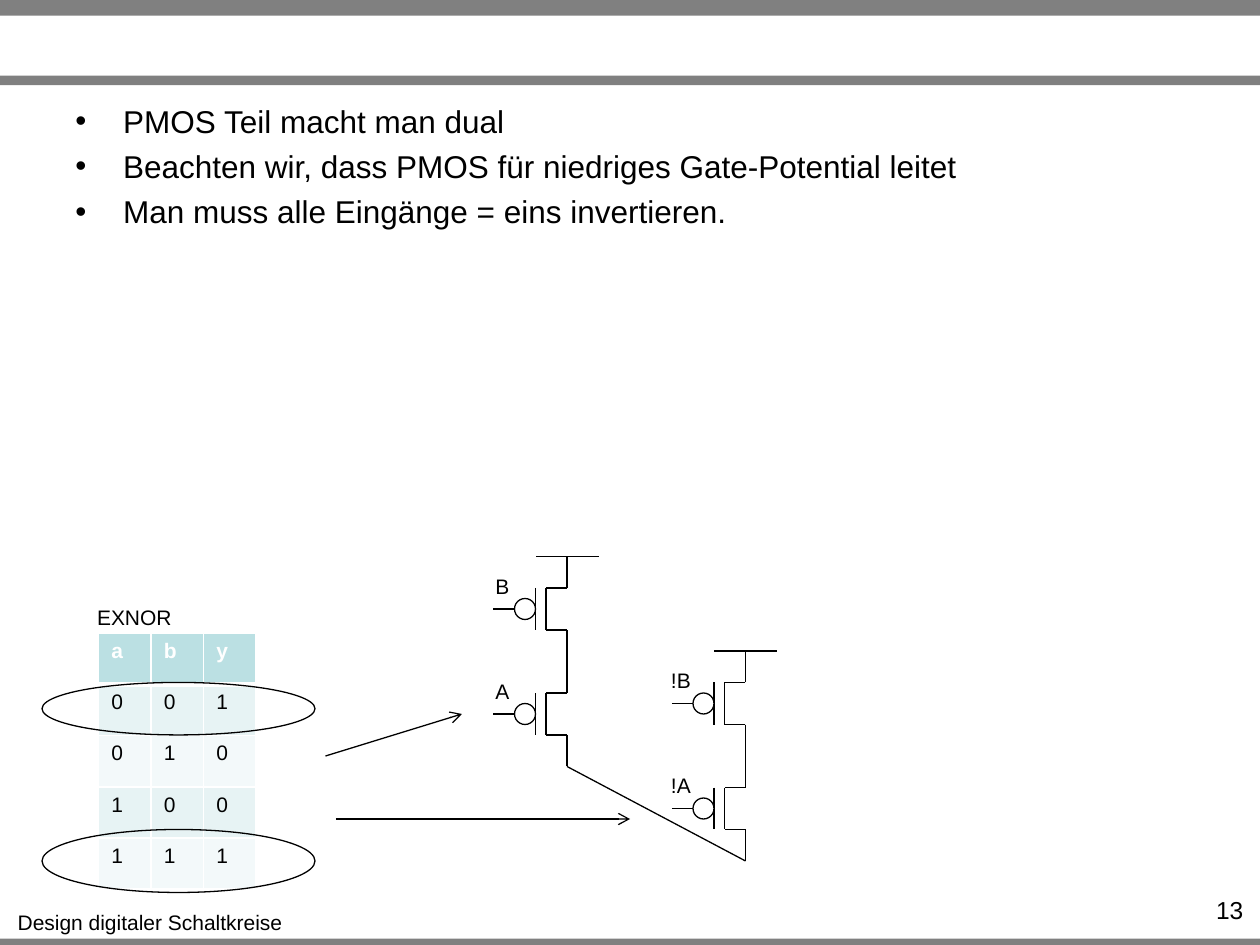
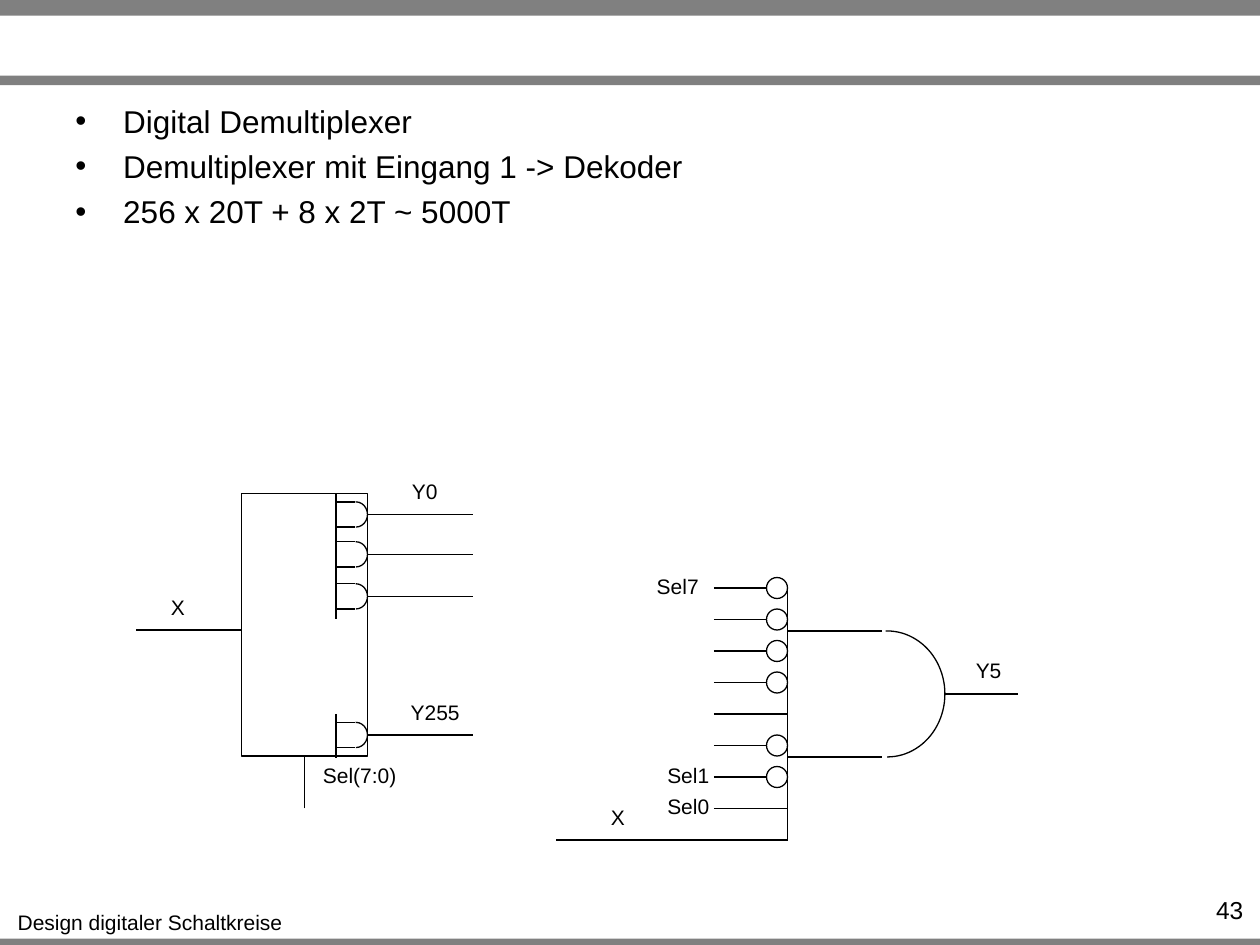
from dataclasses import dataclass

from lxml import etree
from pptx import Presentation
from pptx.dml.color import RGBColor
from pptx.enum.shapes import MSO_CONNECTOR, MSO_SHAPE
from pptx.enum.text import MSO_AUTO_SIZE, PP_ALIGN
from pptx.oxml.ns import qn
from pptx.util import Inches, Pt

RECT, ELLIPSE, ARC = MSO_SHAPE.RECTANGLE, MSO_SHAPE.OVAL, MSO_SHAPE.ARC
STRAIGHT = MSO_CONNECTOR.STRAIGHT
LEFT, CENTER, RIGHT = PP_ALIGN.LEFT, PP_ALIGN.CENTER, PP_ALIGN.RIGHT
FIT_SHAPE = MSO_AUTO_SIZE.SHAPE_TO_FIT_TEXT
BOTTOM_SIDE = 2
COLS, ROWS = 120, 90


@dataclass(frozen=True)
class Theme:
    """Colours, type sizes and line widths of the deck."""
    font: str = "Arial"
    ink: str = "000000"
    paper: str = "FFFFFF"
    band: str = "808080"
    head: str = "BBE0E3"
    stripes: tuple = ("E7F3F4", "F3F9FA")
    body: float = 18
    number: float = 14
    small: float = 12
    bullet_gap: float = 4.3
    line: float = 0.75
    border: float = 1
    head_border: float = 3


class Deck:
    """Draws styled elements on the current slide, placed by grid column and row."""

    def __init__(self, theme):
        self.theme = theme
        self.prs = Presentation()
        self.prs.slide_width, self.prs.slide_height = Inches(10), Inches(7.5)
        self.s = self.target = None

    def x(self, cols):
        """Turn columns into a length."""
        return round(self.prs.slide_width * cols / COLS)

    def y(self, rows):
        """Turn rows into a length."""
        return round(self.prs.slide_height * rows / ROWS)

    def box(self, x, y, w, h):
        """Turn a grid box into lengths."""
        return self.x(x), self.y(y), self.x(w), self.y(h)

    def slide(self, number, bullets):
        """Start a slide with bands, footer, page number and bullets."""
        self.s = self.prs.slides.add_slide(self.prs.slide_layouts[6])
        self.target = self.s.shapes
        for y, h in ((89.4, 0.6), (0, 1.5), (7.2, 0.9)):
            self.shape(RECT, 0, y, COLS, h, fill=self.theme.band, line=None)
        self.label("Design digitaler Schaltkreise", 0.4, 86, 27.8)
        self.bullets(bullets)
        tf = self.text_box(109.2, 84.7, 10.4, 2.9)
        tf.word_wrap = True
        self.run(tf.paragraphs[0], str(number), self.theme.number, align=RIGHT)

    def group(self):
        """Collect the following elements in a new group."""
        self.target = self.s.shapes.add_group_shape().shapes

    def ungroup(self):
        """Return to drawing directly on the slide."""
        self.target = self.s.shapes

    def run(self, p, text, size, color=None, bold=False, align=LEFT):
        """Add one styled run to a paragraph."""
        p.alignment = align
        r = p.add_run()
        r.text = text
        r.font.name, r.font.size, r.font.bold = self.theme.font, Pt(size), bold
        r.font.color.rgb = RGBColor.from_string(color or self.theme.ink)

    def text_box(self, x, y, w, h):
        """Add an empty text box and return its text frame."""
        return self.target.add_textbox(*self.box(x, y, w, h)).text_frame

    def label(self, text, x, y, w):
        """Add a centred one-line label."""
        tf = self.text_box(x, y, w, 3.6)
        tf.word_wrap, tf.auto_size = False, FIT_SHAPE
        self.run(tf.paragraphs[0], text, self.theme.small, align=CENTER)

    def bullets(self, items):
        """Add the bulleted body text."""
        tf = self.text_box(6, 9.1, 108, 19)
        tf.word_wrap = True
        for i, item in enumerate(items):
            p = tf.paragraphs[0] if i == 0 else tf.add_paragraph()
            pPr = p._p.get_or_add_pPr()
            pPr.set("marL", str(Inches(0.38)))
            pPr.set("indent", str(Inches(-0.38)))
            etree.SubElement(pPr, qn("a:buFont"), typeface=self.theme.font)
            etree.SubElement(pPr, qn("a:buChar"), char="•")
            if i:
                p.space_before = Pt(self.theme.bullet_gap)
            self.run(p, item, self.theme.body)

    def shape(self, kind, x, y, w, h, fill=None, line="ink"):
        """Add a preset shape, hollow unless a fill is given."""
        sp = self.target.add_shape(kind, *self.box(x, y, w, h))
        sp.shadow.inherit = False
        if fill:
            sp.fill.solid()
            sp.fill.fore_color.rgb = RGBColor.from_string(fill)
        else:
            sp.fill.background()
        if line:
            self.stroke(sp.line)
        else:
            sp.line.fill.background()
        return sp

    def stroke(self, line):
        """Apply the standard line style."""
        line.color.rgb = RGBColor.from_string(self.theme.ink)
        line.width = Pt(self.theme.line)

    def wire(self, x1, y1, x2, y2, arrow=False):
        """Add a straight line, with an arrowhead at its end on request."""
        sp = self.target.add_connector(
            STRAIGHT, self.x(x1), self.y(y1), self.x(x2), self.y(y2))
        self.stroke(sp.line)
        if arrow:
            etree.SubElement(sp.line._get_or_add_ln(), qn("a:tailEnd"), type="arrow")
        etree.SubElement(sp._element.spPr, qn("a:effectLst"))
        return sp

    def bubble(self, x, y):
        """Add an inversion circle by its left end and centre row."""
        self.shape(ELLIPSE, x, y - 1, 2, 2, fill=self.theme.paper)

    def pmos(self, x, y):
        """Add a PMOS transistor hanging from its top terminal."""
        self.group()
        for x1, y1, x2, y2 in ((0, 0, 0, 3), (0, 3, -2, 3), (-2, 3, -2, 7),
                               (-3, 3, -3, 7), (0, 7, -2, 7), (0, 7, 0, 10),
                               (-7, 5, -5, 5)):
            self.wire(x + x1, y + y1, x + x2, y + y2)
        self.bubble(x - 5, y + 5)
        self.ungroup()

    def pmos_chain(self, x, y, gates, label_width):
        """Add a supply rail with two PMOS transistors in series."""
        self.wire(x + 3, y, x - 3, y)
        for i, gate in enumerate(gates):
            self.pmos(x, y + 10 * i)
            self.label(gate, x - 6.15 - label_width / 2, y + 1 + 10 * i, label_width)

    def and_gate(self, x, y, scale):
        """Add the rounded outline of an AND gate around its centre row."""
        for side in (-6, 6):
            self.wire(x, y + side * scale, x + 9 * scale, y + side * scale)
        sp = self.shape(ARC, x + 4 * scale, y - 6 * scale, 11 * scale, 12 * scale)
        sp.adjustments[0], sp.adjustments[1] = 161.1, 54

    def border(self, cell, bottom):
        """Give a cell paper-coloured borders."""
        tcPr = cell._tc.get_or_add_tcPr()
        widths = dict.fromkeys(("lnL", "lnR", "lnT"), self.theme.border)
        widths["lnB"] = bottom
        for i, (side, width) in enumerate(widths.items()):
            ln = etree.Element(qn(f"a:{side}"), w=str(Pt(width)))
            fill = etree.SubElement(ln, qn("a:solidFill"))
            etree.SubElement(fill, qn("a:srgbClr"), val=self.theme.paper)
            tcPr.insert(i, ln)

    def table(self, x, y, w, h, rows):
        """Add a striped table with a header row."""
        t = self.theme
        table = self.target.add_table(len(rows), len(rows[0]), *self.box(x, y, w, h)).table
        for i, row in enumerate(rows):
            head = i == 0
            for j, text in enumerate(row):
                cell = table.cell(i, j)
                cell.fill.solid()
                cell.fill.fore_color.rgb = RGBColor.from_string(
                    t.head if head else t.stripes[(i - 1) % 2])
                self.border(cell, t.head_border if head else t.border)
                self.run(cell.text_frame.paragraphs[0], text, t.small,
                         t.paper if head else t.ink, bold=head)


def pmos_slide(deck):
    """Draw the EXNOR truth table and its PMOS network."""
    deck.slide(13, ("PMOS Teil macht man dual",
                    "Beachten wir, dass PMOS für niedriges Gate-Potential leitet",
                    "Man muss alle Eingänge = eins invertieren."))
    deck.table(9.4, 60.3, 15, 24.4, ("aby", "001", "010", "100", "111"))
    deck.label("EXNOR", 8, 57, 9.6)
    for y, h in ((65, 5), (79, 6)):
        deck.shape(ELLIPSE, 4, y, 26, h)
    deck.wire(31, 72, 44, 68, arrow=True)
    deck.wire(32, 78, 60, 78, arrow=True)
    deck.pmos_chain(54, 53, ("B", "A"), 3.7)
    deck.pmos_chain(71, 62, ("!B", "!A"), 4.3)
    deck.wire(54, 73, 71, 82)


def demultiplexer_slide(deck):
    """Draw the demultiplexer block and the decoder gate for Y5."""
    deck.slide(43, ("Digital Demultiplexer",
                    "Demultiplexer mit Eingang 1 -> Dekoder",
                    "256 x 20T + 8 x 2T ~ 5000T"))
    block = deck.shape(RECT, 23, 47, 12, 25)
    deck.wire(13, 60, 23, 60)
    deck.wire(29, 77, 29, 72).end_connect(block, BOTTOM_SIDE)
    for y in (49, 52.8, 56.8, 70):
        deck.wire(35, y, 45, y)
        deck.group()
        deck.and_gate(32, y, 0.2)
        deck.wire(32, y - 2, 32, y + 2.2)
        deck.ungroup()

    deck.and_gate(75, 66.1, 1)
    deck.wire(90, 66.1, 97, 66.1)
    deck.wire(75, 56, 75, 80)
    deck.wire(53, 80, 75, 80)
    for i in range(8):
        y = 56 + 3 * i
        deck.wire(68, y, 75, y)
        if i not in (4, 7):
            deck.bubble(73, y)

    for text, x, y, w in (("X", 15.1, 56, 3.7), ("Y0", 38, 45, 4.9),
                          ("Y255", 37.9, 66, 7.1), ("Sel(7:0)", 29.5, 72, 9.5),
                          ("Y5", 91.7, 62, 4.9), ("Sel7", 61.3, 54, 6.5),
                          ("Sel1", 62.3, 72, 6.5), ("Sel0", 62.3, 75, 6.5),
                          ("X", 57, 76, 3.7)):
        deck.label(text, x, y, w)


def main():
    """Build and save the two slides."""
    deck = Deck(Theme())
    pmos_slide(deck)
    demultiplexer_slide(deck)
    deck.prs.save("out.pptx")


if __name__ == "__main__":
    main()
